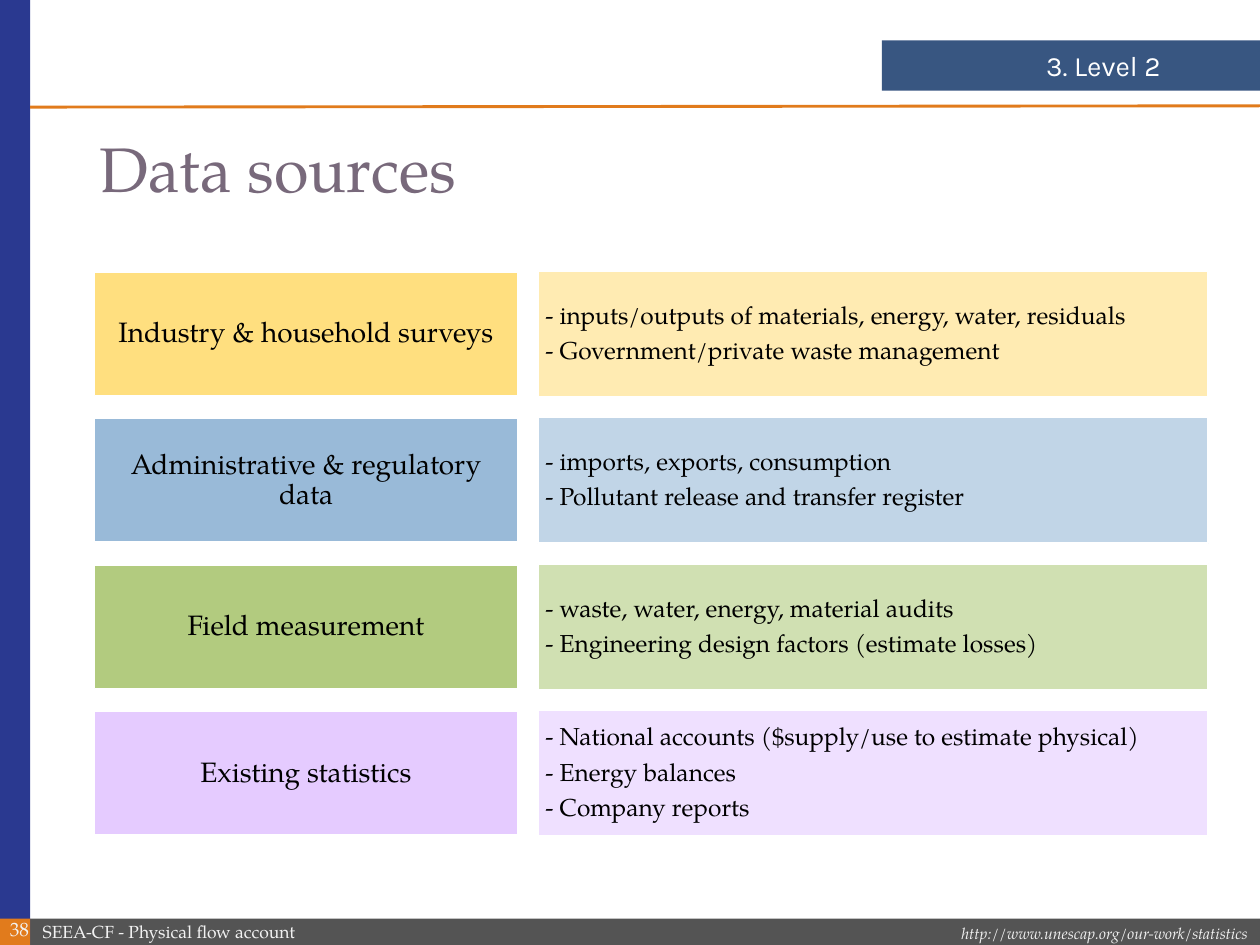
from lxml import etree
from pptx import Presentation
from pptx import util as u
from pptx.dml.color import RGBColor
from pptx.enum import shapes, text
from pptx.oxml import ns

WIDTH, HEIGHT = 10, 7.5
RAIL = 0.24          # width of the left rail
FOOTER = 0.21        # height of the footer bar
SERIF, SANS = "TeX Gyre Pagella", "Karla"

BLACK = RGBColor(0x00, 0x00, 0x00)
WHITE = RGBColor(0xFF, 0xFF, 0xFF)
PALE = RGBColor(0xF2, 0xF2, 0xF2)
GREY = RGBColor(0x54, 0x54, 0x54)
INDIGO = RGBColor(0x2A, 0x39, 0x90)
ORANGE = RGBColor(0xE1, 0x7B, 0x1C)
NAVY = RGBColor(0x07, 0x2C, 0x62)
MAUVE = RGBColor(0x78, 0x69, 0x7B)
AMBER = RGBColor(0xFF, 0xC0, 0x00)
BLUE = RGBColor(0x34, 0x77, 0xB2)
GREEN = RGBColor(0x66, 0x99, 0x00)
LILAC = RGBColor(0xCC, 0x99, 0xFF)

LEFT, CENTER, RIGHT = text.PP_ALIGN.LEFT, text.PP_ALIGN.CENTER, text.PP_ALIGN.RIGHT

SOURCES = [
    (AMBER, "Industry & household surveys",
     ["- inputs/outputs of materials, energy, water, residuals",
      "- Government/private waste management"]),
    (BLUE, "Administrative & regulatory data",
     ["- imports, exports, consumption",
      "- Pollutant release and transfer register"]),
    (GREEN, "Field measurement",
     ["- waste, water, energy, material audits",
      "- Engineering design factors (estimate losses)"]),
    (LILAC, "Existing statistics",
     ["- National accounts ($supply/use to estimate physical)",
      "- Energy balances",
      "- Company reports"]),
]


def inches(box):
    return [u.Inches(length) for length in box]


def add_block(slide, box, color, opacity=100, outline=None):
    shape = slide.shapes.add_shape(shapes.MSO_SHAPE.RECTANGLE, *inches(box))
    shape.shadow.inherit = False
    shape.fill.solid()
    shape.fill.fore_color.rgb = color
    if opacity < 100:
        fill_color = shape.fill._xPr.find(".//" + ns.qn("a:srgbClr"))
        etree.SubElement(fill_color, ns.qn("a:alpha"), val=str(opacity * 1000))
    if outline is None:
        shape.line.fill.background()
    else:
        shape.line.color.rgb = outline
        shape.line.width = u.Pt(1)
    return shape


def write(shape, lines, size, color, align=LEFT, inset=None, name=SERIF,
          italic=False, anchor=text.MSO_ANCHOR.MIDDLE, **spacing):
    """Fill a shape with one paragraph per line, all in the same format."""
    frame = shape.text_frame
    frame.word_wrap = True
    frame.vertical_anchor = anchor
    if inset is not None:
        for side in ("left", "top", "right", "bottom"):
            setattr(frame, f"margin_{side}", u.Inches(inset))
    frame.text = "\n".join(lines)
    font_format = {"size": u.Pt(size), "name": name, "italic": italic}
    for paragraph in frame.paragraphs:
        for key, value in {"alignment": align, **spacing}.items():
            setattr(paragraph, key, value)
        for key, value in font_format.items():
            setattr(paragraph.font, key, value)
        paragraph.font.color.rgb = color


def add_label(slide, box, line, size, color, **options):
    write(slide.shapes.add_textbox(*inches(box)), [line], size, color, **options)


def add_frame(slide, width, height):
    """Draw the left rail, the footer bar and the rule under the header."""
    footer_top = height - FOOTER
    add_block(slide, (RAIL, footer_top, width - RAIL, FOOTER), GREY)
    add_block(slide, (0, 0, RAIL, height), INDIGO)
    add_block(slide, (0, footer_top, RAIL, FOOTER), ORANGE)
    rule = slide.shapes.add_connector(
        shapes.MSO_CONNECTOR.STRAIGHT, *inches((RAIL, 0.85, width, 0.84)))
    rule.line.color.rgb = ORANGE
    rule.line.width = u.Pt(1.65)
    etree.SubElement(rule._element.spPr, ns.qn("a:effectLst"))


def add_footer_text(slide, width, height):
    add_label(slide, (width - 3.74, height - 0.22, 3.74, 0.25),
              "http://www.unescap.org/our-work/statistics", 9, PALE,
              align=RIGHT, italic=True, anchor=text.MSO_ANCHOR.TOP)
    add_label(slide, (RAIL, height - FOOTER, 2.99, 0.2),
              "SEEA-CF - Physical flow account", 10, PALE)
    add_label(slide, (-0.07, height - 0.28, 0.4, 0.31), "38", 11, PALE, align=RIGHT)


def add_section_tag(slide, left, top, width, height):
    add_block(slide, (left, top, width, height), NAVY, opacity=80)
    add_label(slide, (left, top, width * 0.77, height), "3. Level 2", 16, WHITE,
              align=RIGHT, name=SANS)


def add_source_rows(slide, left, top, width, height):
    """Stack one row per source: its name on the left, examples on the right."""
    pitch = height / len(SOURCES)
    name_width, detail_width = width * 0.38, width * 0.602
    detail_left = left + width - detail_width
    for row, (color, source, examples) in enumerate(SOURCES):
        row_top = top + row * pitch
        name_block = add_block(slide, (left, row_top + 0.01, name_width, 0.98),
                               color, 50, WHITE)
        write(name_block, [source], 16, BLACK, CENTER, 0.07, line_spacing=0.9)
        detail_block = add_block(slide, (detail_left, row_top, detail_width, 1),
                                 color, 30, WHITE)
        write(detail_block, examples, 14, BLACK, LEFT, 0.06,
              line_spacing=0.9, space_after=u.Pt(5))


def main():
    presentation = Presentation()
    presentation.slide_width, presentation.slide_height = inches((WIDTH, HEIGHT))
    slide = presentation.slides.add_slide(presentation.slide_layouts[6])
    add_frame(slide, WIDTH, HEIGHT)
    add_footer_text(slide, WIDTH, HEIGHT)
    add_section_tag(slide, WIDTH * 0.7, 0.32, WIDTH * 0.3, 0.4)
    add_label(slide, (0.69, 0.92, 8.62, 0.89), "Data sources", 36, MAUVE,
              line_spacing=0.9)
    add_source_rows(slide, 0.75, 2.15, 8.84, 4.65)
    presentation.save("out.pptx")


if __name__ == "__main__":
    main()
